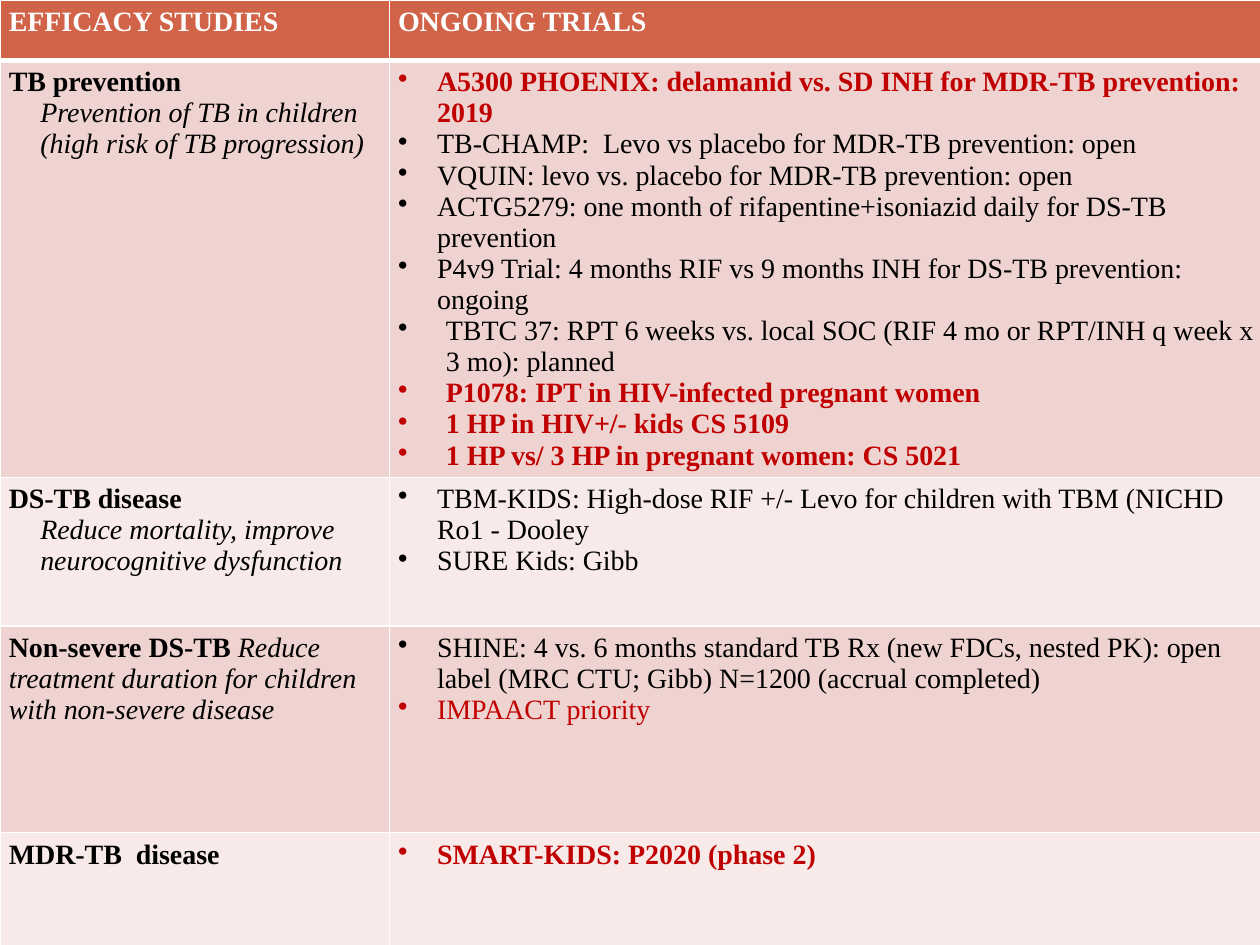
from lxml.etree import SubElement
from pptx import Presentation
from pptx.dml.color import RGBColor
from pptx.oxml.ns import qn
from pptx.util import Inches, Pt

COLORS = {
    "header": "D16349", "dark_band": "EED3D0", "light_band": "F7EAE9",
    "border": "FFFFFF", "white": "FFFFFF", "black": "000000", "red": "C00000",
}
FONT = "Times New Roman"
COLUMN_WIDTHS = (3.09, 7.01)
ROW_HEIGHTS = (0.48, 2.85, 1.18, 1.64, 1.69)
NARROW, WIDE = 0.31, 0.38  # hanging indents of the trial bullets
PLAIN = {}
RED = {"color": "red"}
RED_BOLD = {"color": "red", "bold": True}

# Content
HEADINGS = ("EFFICACY STUDIES", "ONGOING TRIALS")
STUDIES = [  # (title, goal, goal on its own line, trials)
    ("TB prevention",
     "Prevention of TB in children (high risk of TB progression)", True, [
         ("A5300 PHOENIX: delamanid vs. SD INH for MDR-TB prevention: 2019", NARROW, RED_BOLD),
         ("TB-CHAMP:  Levo vs placebo for MDR-TB prevention: open", NARROW, PLAIN),
         ("VQUIN: levo vs. placebo for MDR-TB prevention: open", NARROW, PLAIN),
         ("ACTG5279: one month of rifapentine+isoniazid daily for DS-TB prevention", NARROW, PLAIN),
         ("P4v9 Trial: 4 months RIF vs 9 months INH for DS-TB prevention: ongoing", NARROW, PLAIN),
         ("TBTC 37: RPT 6 weeks vs. local SOC (RIF 4 mo or RPT/INH q week x 3 mo): planned",
          WIDE, PLAIN),
         ("P1078: IPT in HIV-infected pregnant women", WIDE, RED_BOLD),
         ("1 HP in HIV+/- kids CS 5109", WIDE, RED_BOLD),
         ("1 HP vs/ 3 HP in pregnant women: CS 5021", WIDE, RED_BOLD),
     ]),
    ("DS-TB disease",
     "Reduce mortality, improve neurocognitive dysfunction", True, [
         ("TBM-KIDS: High-dose RIF +/- Levo for children with TBM (NICHD Ro1 - Dooley",
          NARROW, PLAIN),
         ("SURE Kids: Gibb", NARROW, PLAIN),
     ]),
    ("Non-severe DS-TB ",
     "Reduce treatment duration for children with non-severe disease", False, [
         ("SHINE: 4 vs. 6 months standard TB Rx (new FDCs, nested PK): open label "
          "(MRC CTU; Gibb) N=1200 (accrual completed)", NARROW, PLAIN),
         ("IMPAACT priority", NARROW, RED),
     ]),
    ("MDR-TB  disease", None, False, [
        ("SMART-KIDS: P2020 (phase 2)", NARROW, RED_BOLD),
    ]),
]


def add_text(paragraph, text, color="black", bold=False, italic=False):
    run = paragraph.add_run()
    run.text = text
    run.font.name = FONT
    run.font.size = Pt(16)
    run.font.bold = bold
    run.font.italic = italic
    run.font.color.rgb = RGBColor.from_string(COLORS[color])


def indent(paragraph, left, bullet=None):
    properties = paragraph._p.get_or_add_pPr()
    properties.set("marL", str(Inches(left)))
    properties.set("indent", str(-Inches(left) if bullet else 0))
    if bullet:
        SubElement(properties, qn("a:buChar"), char=bullet)


def style_cell(cell, fill, top=1, bottom=1):
    cell.margin_left = cell.margin_right = Inches(0.07)
    cell.margin_top = cell.margin_bottom = Inches(0.05)
    properties = cell._tc.get_or_add_tcPr()
    for side, width in (("L", 1), ("R", 1), ("T", top), ("B", bottom)):
        line = SubElement(properties, qn(f"a:ln{side}"), w=str(Pt(width)))
        line_fill = SubElement(line, qn("a:solidFill"))
        SubElement(line_fill, qn("a:srgbClr"), val=COLORS["border"])
    cell.fill.solid()
    cell.fill.fore_color.rgb = RGBColor.from_string(COLORS[fill])


deck = Presentation()
deck.slide_width, deck.slide_height = Inches(10), Inches(7.5)
slide = deck.slides.add_slide(deck.slide_layouts[6])

# Table grid
studies_table = slide.shapes.add_table(
    len(ROW_HEIGHTS), len(COLUMN_WIDTHS), 0, 0,
    Inches(sum(COLUMN_WIDTHS)), Inches(sum(ROW_HEIGHTS))).table
for column, width in zip(studies_table.columns, COLUMN_WIDTHS):
    column.width = Inches(width)
for row, height in zip(studies_table.rows, ROW_HEIGHTS):
    row.height = Inches(height)

# Header row
for column_index, heading in enumerate(HEADINGS):
    heading_cell = studies_table.cell(0, column_index)
    style_cell(heading_cell, "header", bottom=3)
    add_text(heading_cell.text_frame.paragraphs[0], heading, color="white", bold=True)

# One row per study type
for row_index, (title, goal, goal_below, trials) in enumerate(STUDIES, start=1):
    study_cell, trials_cell = studies_table.rows[row_index].cells
    for cell in (study_cell, trials_cell):
        style_cell(cell, "dark_band" if row_index % 2 else "light_band",
                   top=3 if row_index == 1 else 1)

    study_line = study_cell.text_frame.paragraphs[0]
    add_text(study_line, title, bold=True)
    if goal_below:
        study_line = study_cell.text_frame.add_paragraph()
        indent(study_line, 0.25)
    if goal:
        add_text(study_line, goal, italic=True)

    for trial_index, (trial, hanging, emphasis) in enumerate(trials):
        frame = trials_cell.text_frame
        trial_line = frame.add_paragraph() if trial_index else frame.paragraphs[0]
        indent(trial_line, hanging, bullet="•")
        add_text(trial_line, trial, **emphasis)

deck.save("out.pptx")
